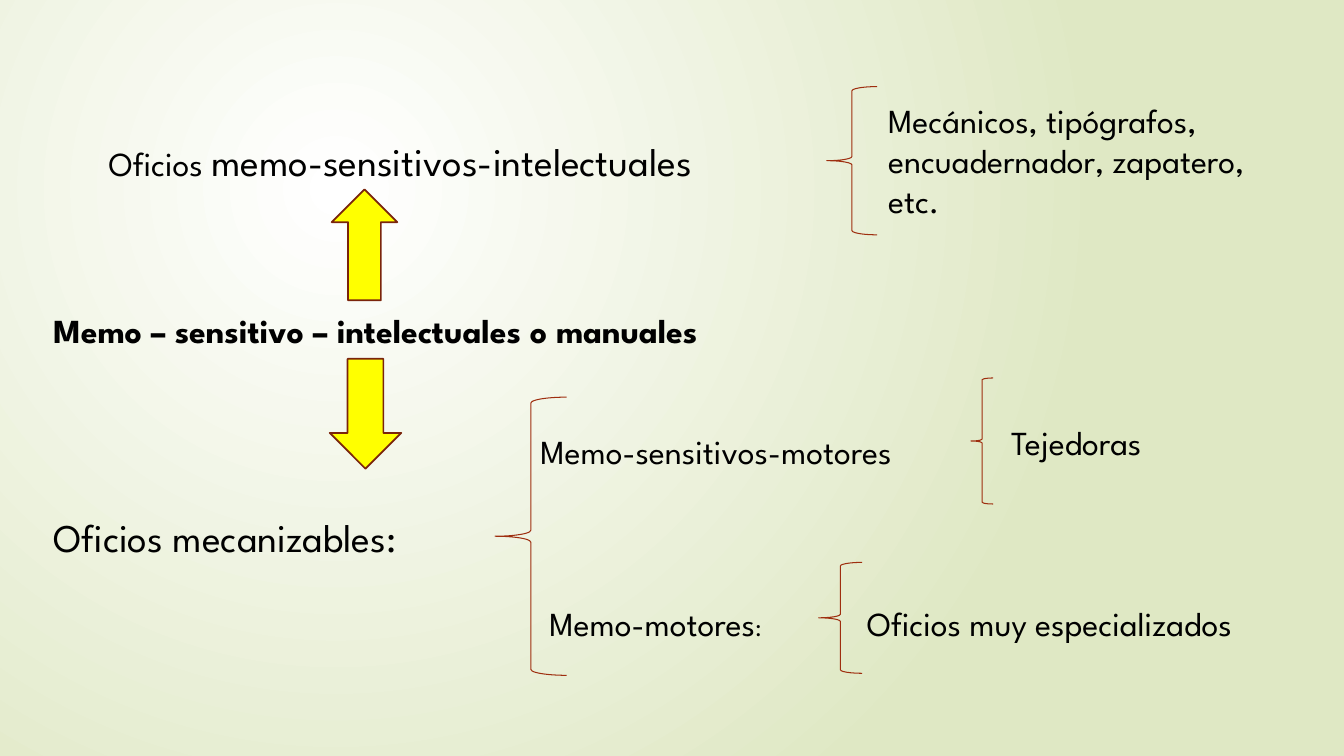
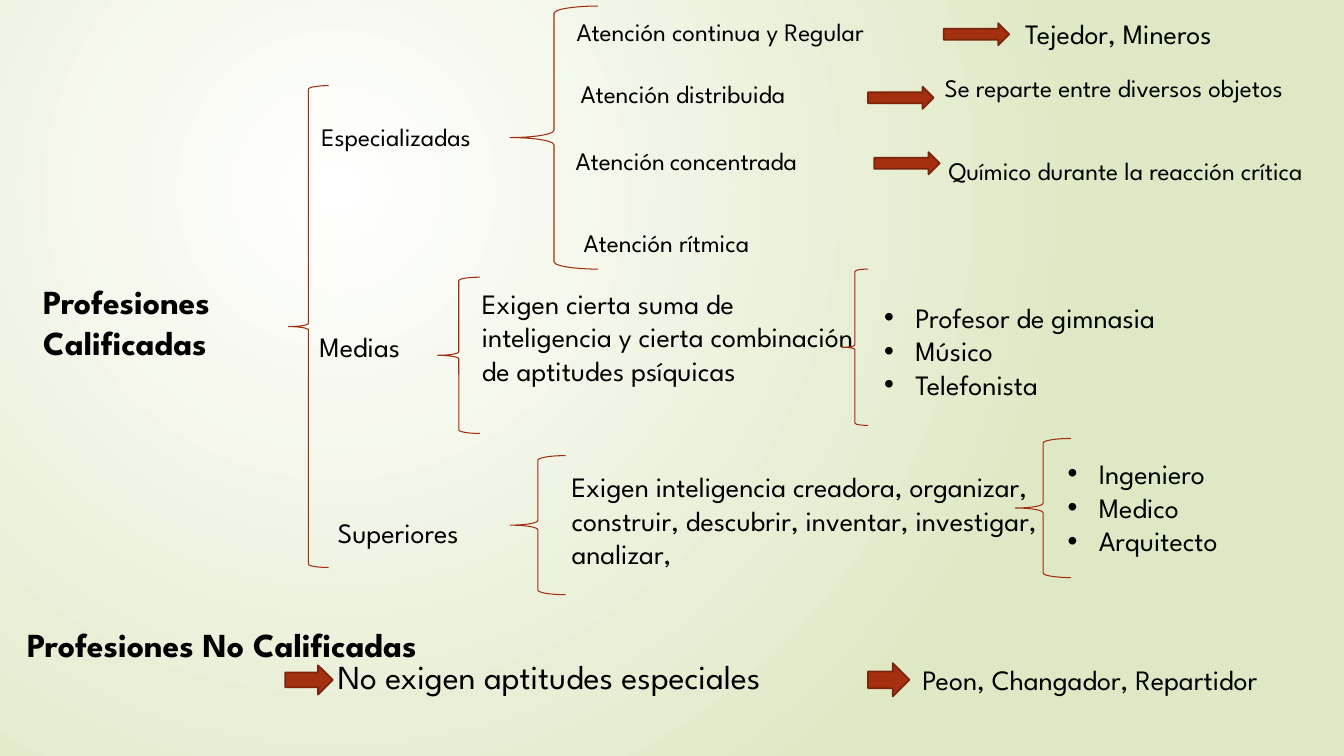
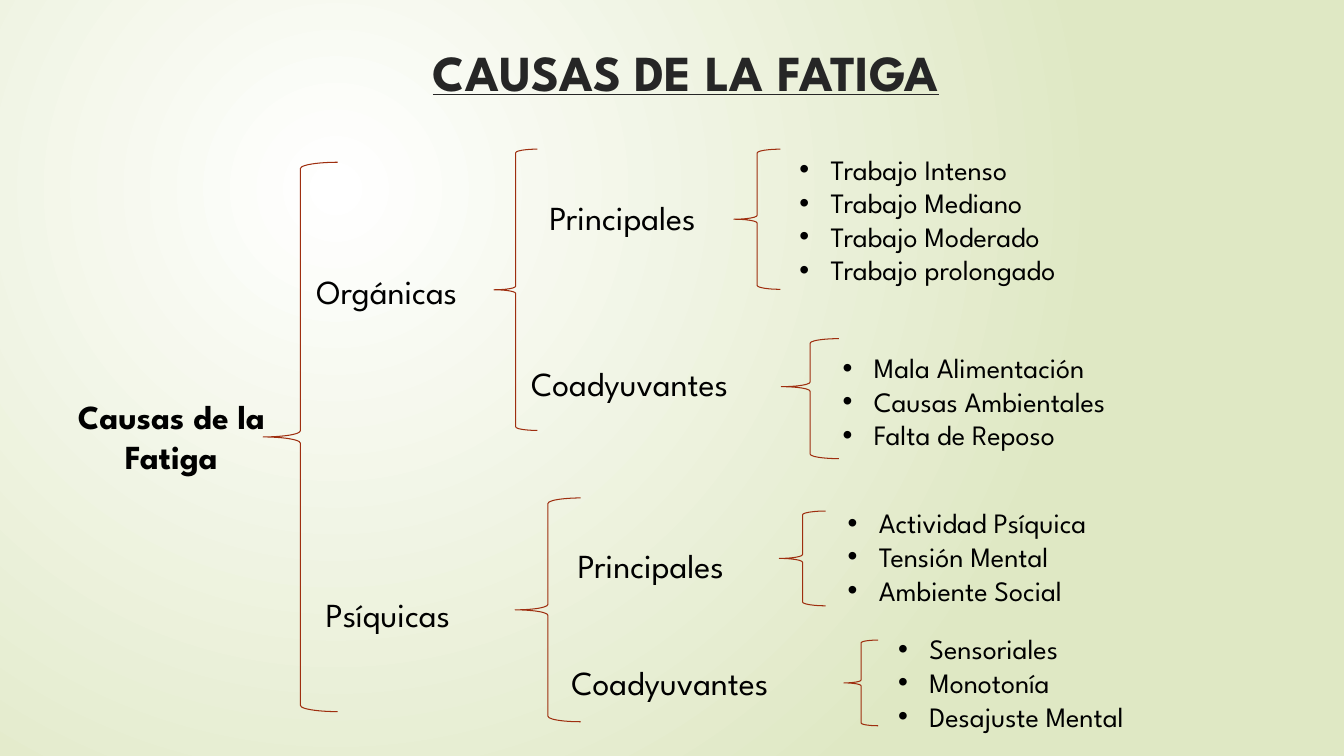
from lxml import etree
from pptx import Presentation
from pptx.dml.color import RGBColor
from pptx.enum.shapes import MSO_SHAPE as Shape
from pptx.enum.text import MSO_ANCHOR as Anchor, PP_ALIGN as Align
from pptx.oxml import parse_xml
from pptx.oxml.ns import nsdecls, qn
from pptx.util import Inches, Pt

FONT = "League Spartan"
BLACK = RGBColor(0x00, 0x00, 0x00)
TITLE_GREY = RGBColor(0x26, 0x26, 0x26)
WHITE = RGBColor(0xFF, 0xFF, 0xFF)
PALE_GREEN = RGBColor(0xDF, 0xE8, 0xC4)
BRACE_RED = RGBColor(0x9E, 0x2E, 0x0F)
ARROW_RED = RGBColor(0xA5, 0x30, 0x10)
ARROW_EDGE = RGBColor(0x7A, 0x24, 0x0C)
YELLOW = RGBColor(0xFF, 0xFF, 0x00)
BULLET_INDENT = Inches(0.31)
TITLE_ONLY, BLANK = 5, 6


def set_background(master):
    content = master.element.cSld
    for old in content.findall(qn("p:bg")):
        content.remove(old)
    content.insert(0, parse_xml(
        f'<p:bg {nsdecls("p", "a")}><p:bgPr><a:gradFill rotWithShape="1"><a:gsLst>'
        f'<a:gs pos="0"><a:srgbClr val="{WHITE}"/></a:gs>'
        f'<a:gs pos="100000"><a:srgbClr val="{PALE_GREEN}"/></a:gs></a:gsLst>'
        '<a:path path="circle"><a:fillToRect l="50000" t="50000" r="100000" b="100000"/>'
        '</a:path></a:gradFill><a:effectLst/></p:bgPr></p:bg>'))


def add_span(para, text, size, bold=False, colour=BLACK):
    span = para.add_run()
    span.text = text
    span.font.name = FONT
    span.font.size = Pt(size)
    span.font.bold = bold
    span.font.color.rgb = colour
    return span


def add_box(page, left, top, width, size, lines):
    height = 0.1 + lines * size / 60
    box = page.shapes.add_textbox(Inches(left), Inches(top), Inches(width), Inches(height))
    box.text_frame.word_wrap = True
    return box.text_frame


def add_label(page, left, top, width, size, *texts, lines=1, bold=False, align=Align.LEFT):
    para = add_box(page, left, top, width, size, lines).paragraphs[0]
    para.alignment = align
    for text in texts:
        words, span_size = text if isinstance(text, tuple) else (text, size)
        add_span(para, words, span_size, bold)


def add_bullets(page, left, top, width, items, size=20):
    frame = add_box(page, left, top, width, size, len(items))
    for index, item in enumerate(items):
        para = frame.add_paragraph() if index else frame.paragraphs[0]
        props = para._p.get_or_add_pPr()
        props.set("marL", str(BULLET_INDENT))
        props.set("indent", str(-BULLET_INDENT))
        etree.SubElement(props, qn("a:buFont")).set("typeface", "Arial")
        etree.SubElement(props, qn("a:buChar")).set("char", "•")
        add_span(para, item, size)


def add_outline(page, kind, bounds, colour, weight):
    shape = page.shapes.add_shape(kind, *map(Inches, bounds))
    shape.shadow.inherit = False
    shape.line.color.rgb = colour
    shape.line.width = Pt(weight)
    return shape


def add_brace(page, *bounds, adjustments=()):
    brace = add_outline(page, Shape.LEFT_BRACE, bounds, BRACE_RED, 0.75)
    brace.fill.background()
    for index, value in enumerate(adjustments):
        brace.adjustments[index] = value


def add_arrow(page, kind, colour, *bounds):
    arrow = add_outline(page, kind, bounds, ARROW_EDGE, 1.25)
    arrow.fill.solid()
    arrow.fill.fore_color.rgb = colour


def add_title(page, text):
    title = page.shapes.title
    title.left, title.top, title.width, title.height = map(Inches, (1.93, 0.36, 9.75, 1.4))
    title.text_frame.vertical_anchor = Anchor.TOP
    para = title.text_frame.paragraphs[0]
    para.alignment = Align.CENTER
    add_span(para, text, 36, True, TITLE_GREY).font.underline = True


def build_trades(deck):
    page = deck.slides.add_slide(deck.slide_layouts[BLANK])
    add_label(page, 0.98, 1.31, 7.73, 28, ("Oficios ", 24), "memo-sensitivos-intelectuales")
    add_label(page, 0.43, 3.03, 8.95, 24, "Memo – sensitivo – intelectuales o manuales",
              lines=2, bold=True)
    add_label(page, 8.71, 0.94, 4.26, 24,
              "Mecánicos, tipógrafos, encuadernador, zapatero, etc.", lines=3)
    add_label(page, 0.43, 5.04, 5.01, 28, "Oficios mecanizables:")
    add_label(page, 5.26, 4.23, 4.59, 24, "Memo-sensitivos-motores")
    add_label(page, 5.35, 5.93, 2.86, 24, "Memo-motores", (":", 18))
    add_label(page, 9.93, 4.14, 2.43, 24, "Tejedoras")
    add_label(page, 8.5, 5.93, 4.93, 24, "Oficios muy especializados")
    for bounds in ((8.2, 0.86, 0.5, 1.47), (4.91, 3.94, 0.71, 2.76),
                   (8.12, 5.58, 0.43, 1.1), (9.63, 3.75, 0.22, 1.25)):
        add_brace(page, *bounds)
    add_arrow(page, Shape.DOWN_ARROW, YELLOW, 3.27, 3.56, 0.71, 1.09)
    add_arrow(page, Shape.UP_ARROW, YELLOW, 3.29, 1.88, 0.65, 1.1)


def build_professions(deck):
    page = deck.slides.add_slide(deck.slide_layouts[BLANK])
    add_label(page, 0.33, 2.74, 2.69, 24, "Profesiones Calificadas", lines=2, bold=True)
    add_label(page, 0.17, 6.14, 4.51, 24, "Profesiones No Calificadas", bold=True)
    for left, top, width, size, text in (
            (3.09, 1.15, 1.97, 18, "Especializadas"),
            (5.62, 0.11, 4.44, 18, "Atención continua y Regular"),
            (10.07, 0.11, 2.43, 20, "Tejedor, Mineros"),
            (5.66, 0.73, 3.47, 18, "Atención distribuida"),
            (9.27, 0.67, 3.82, 18, "Se reparte entre diversos objetos"),
            (5.69, 2.21, 2.3, 18, "Atención rítmica"),
            (9.31, 1.49, 3.73, 18, "Químico durante la reacción crítica"),
            (3.07, 3.22, 2.96, 20, "Medias"),
            (3.25, 5.06, 2.36, 20, "Superiores"),
            (3.25, 6.46, 5.68, 24, "No exigen aptitudes especiales"),
            (9.05, 6.52, 4.67, 20, "Peon, Changador, Repartidor")):
        add_label(page, left, top, width, size, text)
    add_label(page, 5.61, 1.39, 3.02, 18, "Atención", (" ", 14), "concentrada")
    add_label(page, 4.68, 2.79, 3.99, 20,
              "Exigen cierta suma de inteligencia y cierta combinación de aptitudes psíquicas",
              lines=4)
    add_label(page, 5.57, 4.61, 4.91, 20,
              "Exigen inteligencia creadora, organizar, construir, descubrir, inventar, "
              "investigar, analizar,", lines=3)
    add_bullets(page, 8.67, 2.93, 3.64, ("Profesor de gimnasia", "Músico", "Telefonista"))
    add_bullets(page, 10.49, 4.48, 2.5, ("Ingeniero", "Medico", "Arquitecto"))
    for bounds in ((2.86, 0.85, 0.4, 4.78), (5.06, 0.06, 0.87, 2.61),
                   (4.34, 2.75, 0.42, 1.55), (8.35, 2.67, 0.26, 1.55),
                   (5.06, 4.52, 0.55, 1.38), (10.07, 4.35, 0.55, 1.38)):
        add_brace(page, *bounds)
    for bounds in ((9.36, 0.23, 0.65, 0.22), (8.61, 0.86, 0.65, 0.22),
                   (8.67, 1.51, 0.65, 0.22), (2.83, 6.6, 0.47, 0.29),
                   (8.61, 6.58, 0.41, 0.33)):
        add_arrow(page, Shape.RIGHT_ARROW, ARROW_RED, *bounds)


def build_fatigue(deck):
    page = deck.slides.add_slide(deck.slide_layouts[TITLE_ONLY])
    add_title(page, "CAUSAS DE LA FATIGA")
    add_label(page, 0.22, 3.88, 2.96, 24, "Causas de la Fatiga",
              lines=2, bold=True, align=Align.CENTER)
    for left, top, width, text in (
            (3.04, 2.64, 2.21, "Orgánicas"), (3.13, 5.84, 2.21, "Psíquicas"),
            (5.35, 1.9, 2.56, "Principales"), (5.17, 3.55, 2.81, "Coadyuvantes"),
            (5.63, 5.36, 2.56, "Principales"), (5.57, 6.52, 2.77, "Coadyuvantes")):
        add_label(page, left, top, width, 24, text)
    for left, top, width, items in (
            (7.83, 1.46, 3.69, ("Trabajo Intenso", "Trabajo Mediano",
                                "Trabajo Moderado", "Trabajo prolongado")),
            (8.26, 3.43, 3.69, ("Mala Alimentación", "Causas Ambientales", "Falta de Reposo")),
            (8.31, 4.97, 4.47, ("Actividad Psíquica", "Tensión Mental", "Ambiente Social")),
            (8.81, 6.22, 3.28, ("Sensoriales", "Monotonía", "Desajuste Mental"))):
        add_bullets(page, left, top, width, items)
    for bounds in ((2.61, 1.61, 0.74, 5.45), (4.9, 1.48, 0.43, 2.79),
                   (7.28, 1.48, 0.46, 1.39), (7.73, 5.07, 0.46, 0.94),
                   (8.37, 6.35, 0.34, 0.85), (5.11, 4.94, 0.65, 2.22)):
        add_brace(page, *bounds)
    add_brace(page, 7.75, 3.36, 0.57, 1.19, adjustments=(0.08, 0.4))


def main():
    deck = Presentation()
    deck.slide_width = Inches(13.33)
    deck.slide_height = Inches(7.5)
    set_background(deck.slide_master)
    build_trades(deck)
    build_professions(deck)
    build_fatigue(deck)
    deck.save("out.pptx")


if __name__ == "__main__":
    main()
